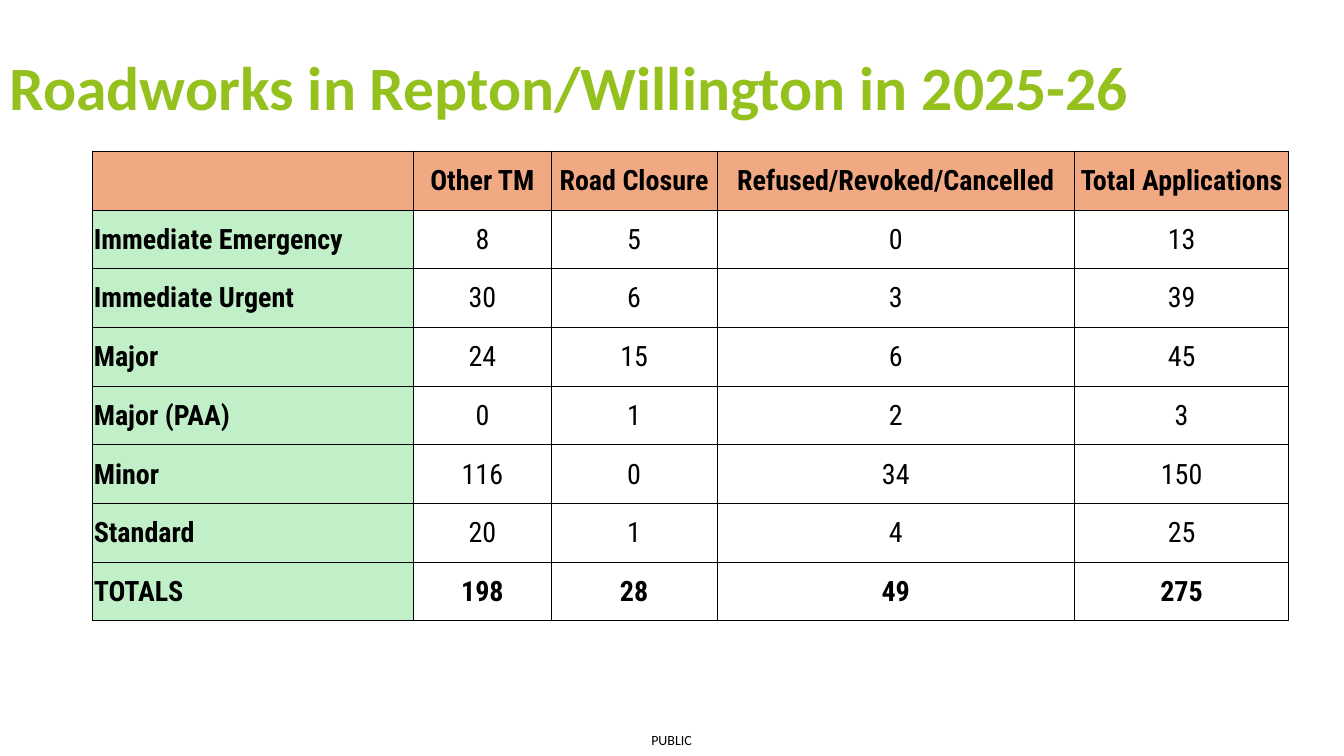
from lxml import etree
from pptx import Presentation
from pptx import util as u
from pptx.dml.color import RGBColor
from pptx.enum import text
from pptx.oxml import ns

TITLE = "Roadworks in Repton/Willington in 2025-26"
MARKING = "PUBLIC"
ROWS = [
    ("", "Other TM", "Road Closure", "Refused/Revoked/Cancelled", "Total Applications"),
    ("Immediate Emergency", 8, 5, 0, 13),
    ("Immediate Urgent", 30, 6, 3, 39),
    ("Major", 24, 15, 6, 45),
    ("Major (PAA)", 0, 1, 2, 3),
    ("Minor", 116, 0, 34, 150),
    ("Standard", 20, 1, 4, 25),
    ("TOTALS", 198, 28, 49, 275),
]
COLUMN_WIDTHS = (3.18, 1.37, 1.64, 3.55, 2.12)
COLORS = {"title": "95C11F", "ink": "000000", "header": "F1A983", "label": "C1F0C8"}


def set_font(para, name, size, color, bold=False):
    font = para.font
    font.name, font.size, font.bold = name, u.Pt(size), bold
    font.color.rgb = RGBColor.from_string(COLORS[color])


def add_text(page, words, place, size, color, bold=False):
    box = page.shapes.add_textbox(*map(u.Inches, place))
    para = box.text_frame.paragraphs[0]
    para.text = words
    set_font(para, "Calibri", size, color, bold)
    return box.text_frame


def add_borders(cell):
    properties = cell._tc.get_or_add_tcPr()
    for side in ("a:lnL", "a:lnR", "a:lnT", "a:lnB"):
        line = etree.SubElement(properties, ns.qn(side), w=str(u.Pt(0.5)))
        fill = etree.SubElement(line, ns.qn("a:solidFill"))
        etree.SubElement(fill, ns.qn("a:srgbClr"), val=COLORS["ink"])


def fill_cell(cell, value, row, column):
    cell.margin_left = cell.margin_right = cell.margin_top = u.Inches(0.01)
    cell.margin_bottom = 0
    cell.vertical_anchor = text.MSO_ANCHOR.MIDDLE
    add_borders(cell)
    if row == 0 or column == 0:
        cell.fill.solid()
        shade = "header" if row == 0 else "label"
        cell.fill.fore_color.rgb = RGBColor.from_string(COLORS[shade])
    else:
        cell.fill.background()
    para = cell.text_frame.paragraphs[0]
    para.text = str(value)
    para.alignment = text.PP_ALIGN.CENTER if column else text.PP_ALIGN.LEFT
    bold = column == 0 or row in (0, len(ROWS) - 1)
    set_font(para, "Roboto Condensed", 20, "ink", bold)


def add_roadworks_table(page):
    place = map(u.Inches, (0.92, 1.5, sum(COLUMN_WIDTHS), 4.66))
    table = page.shapes.add_table(len(ROWS), len(COLUMN_WIDTHS), *place).table
    table.horz_banding = False
    for column, width in zip(table.columns, COLUMN_WIDTHS):
        column.width = u.Inches(width)
    for row, values in enumerate(ROWS):
        for column, value in enumerate(values):
            fill_cell(table.cell(row, column), value, row, column)


def main():
    """Build the roadworks summary slide."""
    deck = Presentation()
    deck.slide_width, deck.slide_height = u.Inches(13.33), u.Inches(7.5)
    page = deck.slides.add_slide(deck.slide_layouts[6])

    marking = add_text(page, MARKING, (6.46, 7.26, 0.44, 0.17), 10, "ink")
    marking.margin_left = marking.margin_right = 0
    marking.margin_top = marking.margin_bottom = 0

    title = add_text(page, TITLE, (0, 0.46, 11.5, 0.88), 44, "title", True)
    title.word_wrap = True
    title.vertical_anchor = text.MSO_ANCHOR.MIDDLE
    title.paragraphs[0].line_spacing = 0.9

    add_roadworks_table(page)
    deck.save("out.pptx")


if __name__ == "__main__":
    main()
